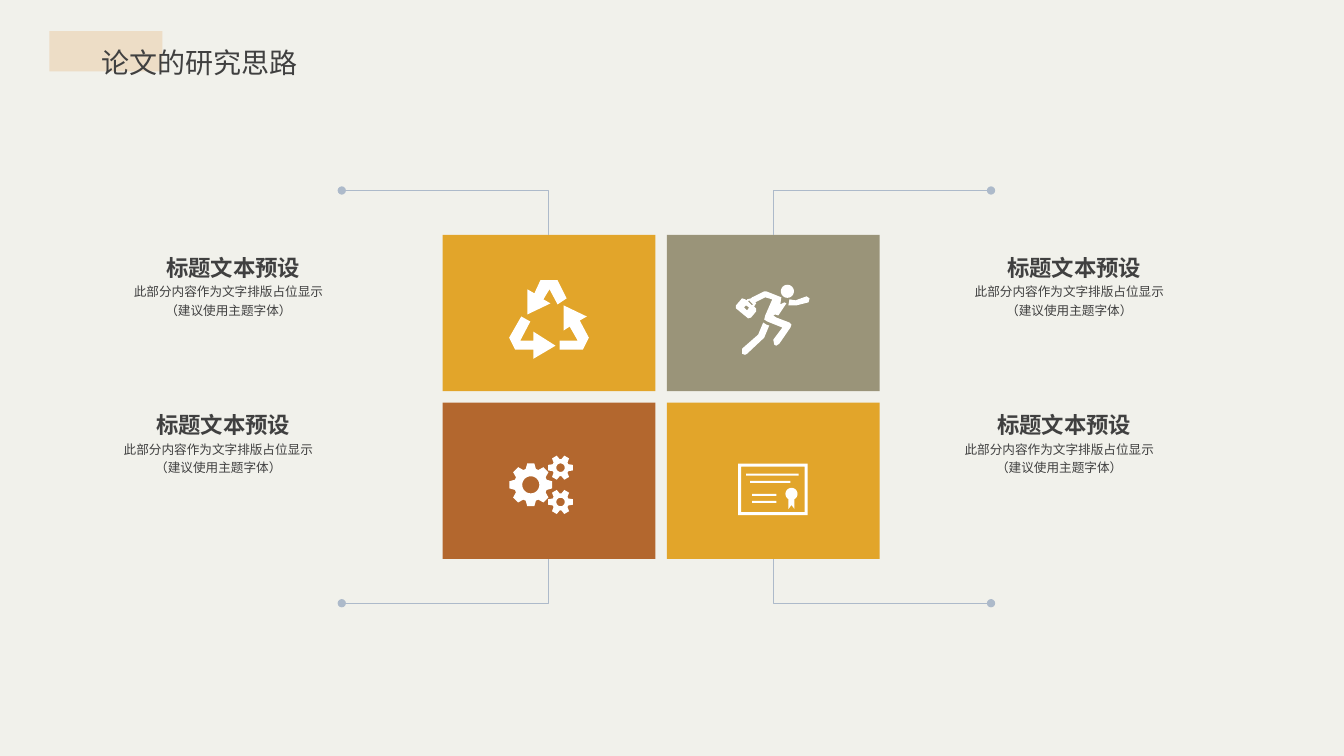
import math
from lxml import etree
from pptx import Presentation
from pptx import util as u
from pptx.dml.color import RGBColor
from pptx.enum import shapes, text
from pptx.oxml.ns import qn

FONT = "Noto Sans CJK SC"
COLORS = dict(bg="F1F1EB", tab="EDDDC6", amber="E2A52A", olive="9A9479",
              rust="B3672E", line="ADBACA", ink="404040", white="FFFFFF")
TITLE = "论文的研究思路"
HEADING = "标题文本预设"
BODY = "此部分内容作为文字排版占位显示\n（建议使用主题字体）"

# Layout in inches: a 2 x 2 grid of cards with captions outside
CARD_X, CARD_Y, CARD_W, CARD_H, GAP = 4.39, 2.33, 2.11, 1.55, 0.115
LEAD = 0.44                      # height of the leader lines
DOT_X = (3.39, 9.83)             # outer ends of the leader lines
CAPTION_X, CAPTION_DX, ROW_SHIFT = 1.23, 8.34, -0.1
CAPTION_Y, CAPTION_DY = 2.33, 1.56


# Icon outlines, in hundredths of an inch from the icon's corner
def arc(cx, cy, r, start=0, end=345):
    return [(cx + r * math.cos(math.radians(a)), cy + r * math.sin(math.radians(a)))
            for a in range(start, end + 1, 15)]


def box(x1, y1, x2, y2):
    return [(x1, y1), (x2, y1), (x2, y2), (x1, y2)]


def gear(cx, cy, teeth, root, tip, hole):
    half = math.pi / teeth
    corners = ((-0.8, root), (-0.42, tip), (0.42, tip), (0.8, root))
    rim = [(cx + r * math.cos(2 * half * i + k * half),
            cy + r * math.sin(2 * half * i + k * half))
           for i in range(teeth) for k, r in corners]
    return [rim, arc(cx, cy, hole)]


RECYCLE = [
    [(48, 0), (31, 0), (25, 13), (18, 9), (18, 34), (41, 23), (34, 19), (40, 9),
     (48, 24), (57, 18)],
    [(24, 60), (11, 60), (21, 41), (12, 36), (0, 57), (6, 69), (24, 69), (24, 78),
     (46, 65), (24, 51)],
    [(70, 40), (77, 36), (54, 25), (54, 50), (60, 46), (68, 60), (50, 60), (50, 69),
     (73, 69), (79, 57)],
]
RUNNER = [
    # front arm
    [(54, 15), (60, 16), (71, 12), (74, 14), (73, 18), (61, 21), (53, 21)],
    # body, bag and front leg
    [(54, 38), (41, 33), (38, 31), (40, 30), (43, 31), (51, 19), (49, 18), (45, 20),
     (46, 13), (41, 11), (31, 7), (29, 7), (17, 13), (16, 14), (12, 15), (12, 16),
     (10, 15), (7, 14), (1, 21), (1, 24), (12, 33), (13, 34), (16, 33), (21, 27),
     (21, 24), (19, 22), (21, 19), (20, 18), (30, 13), (37, 15), (30, 31), (29, 35),
     (32, 37), (47, 43), (38, 55), (39, 60), (41, 61), (44, 59), (55, 43), (56, 40)],
    # bag handle and clasp
    [(18, 20), (17, 21), (13, 17), (14, 16)],
    [(12, 26), (9, 23), (11, 21), (14, 23)],
    # back leg
    [(28, 38), (23, 50), (7, 64), (7, 69), (10, 70), (12, 69), (28, 54), (29, 53),
     (34, 41), (31, 40)],
    arc(52, 7, 6.5),
]
GEARS = (gear(21.5, 29, 8, 16.5, 21.5, 8.5) + gear(51, 12, 6, 8.5, 12.5, 4.2)
         + gear(51, 46, 6, 8.5, 12.5, 4.2))
CERTIFICATE = [
    box(0, 0, 69, 51), box(3, 3, 66, 48),
    box(8, 10, 60, 12), box(12, 17, 52, 19), box(14, 30, 38, 32), box(14, 37, 38, 39),
    arc(53, 30, 6, 120, 420) + [(56, 45), (53, 41), (50, 45)],
]

# column, row, card colour, icon outline, icon corner
CARDS = [
    (0, 0, "amber", RECYCLE, (5.05, 2.78)),
    (1, 0, "olive", RUNNER, (7.29, 2.82)),
    (0, 1, "rust", GEARS, (5.05, 4.52)),
    (1, 1, "amber", CERTIFICATE, (7.32, 4.6)),
]

prs = Presentation()
prs.slide_width, prs.slide_height = u.Inches(13.33), u.Inches(7.5)
slide = prs.slides.add_slide(prs.slide_layouts[6])
slide.background.fill.solid()
slide.background.fill.fore_color.rgb = RGBColor.from_string(COLORS["bg"])


def paint(sp, color):
    sp.shadow.inherit = False
    sp.fill.solid()
    sp.fill.fore_color.rgb = RGBColor.from_string(COLORS[color])
    sp.line.fill.background()


def add_rect(x, y, w, h, color):
    paint(slide.shapes.add_shape(shapes.MSO_SHAPE.RECTANGLE, *map(u.Inches, (x, y, w, h))),
          color)


def add_text(x, y, w, h, words, size, align, spacing=1.0, bold=False, wrap=True,
             anchor=text.MSO_ANCHOR.TOP, inset=0):
    tf = slide.shapes.add_textbox(*map(u.Inches, (x, y, w, h))).text_frame
    tf.word_wrap, tf.vertical_anchor = wrap, anchor
    tf.margin_left = tf.margin_right = u.Inches(inset)
    tf.margin_top = tf.margin_bottom = u.Inches(inset / 2)
    p = tf.paragraphs[0]
    p.text, p.alignment, p.line_spacing = words, align, spacing
    p.font.name, p.font.size, p.font.bold = FONT, u.Pt(size), bold
    p.font.color.rgb = RGBColor.from_string(COLORS["ink"])
    latin = p._p.pPr.find(qn("a:defRPr")).find(qn("a:latin"))
    ea = etree.Element(qn("a:ea"), typeface=FONT)
    latin.addnext(ea)


def add_leader(dot, card):
    sp = slide.shapes.add_connector(shapes.MSO_CONNECTOR.ELBOW,
                                    *map(u.Inches, dot + card))
    sp.line.width = u.Pt(0.75)
    sp.line.color.rgb = RGBColor.from_string(COLORS["line"])
    spPr = sp._element.spPr
    spPr.find(qn("a:prstGeom")).set("prst", "bentConnector2")
    etree.SubElement(spPr.find(qn("a:ln")), qn("a:headEnd"), type="oval")
    etree.SubElement(spPr, qn("a:effectLst"))


def add_icon(outlines, corner):
    placed = [[tuple(u.Inches(c + v / 100) for c, v in zip(corner, pt)) for pt in outline]
              for outline in outlines]
    fb = slide.shapes.build_freeform(*placed[0][0])
    for i, outline in enumerate(placed):
        if i:
            fb.move_to(*outline[0])
        fb.add_line_segments(outline[1:], close=True)
    paint(fb.convert_to_shape(), "white")


# Title
add_rect(0.49, 0.31, 1.12, 0.4, "tab")
add_text(0.91, 0.24, 3.5, 0.55, TITLE, 20, text.PP_ALIGN.JUSTIFY, 1.5, inset=0.1)

# Cards with leader, icon and caption
for col, row, color, icon, corner in CARDS:
    x = CARD_X + col * (CARD_W + GAP)
    y = CARD_Y + row * (CARD_H + GAP)
    add_rect(x, y, CARD_W, CARD_H, color)
    edge = y + row * CARD_H
    add_leader((DOT_X[col], edge + (LEAD if row else -LEAD)), (x + CARD_W / 2, edge))
    add_icon(icon, corner)
    cx = CAPTION_X + col * CAPTION_DX + row * ROW_SHIFT
    cy = CAPTION_Y + row * CAPTION_DY
    add_text(cx, cy, 2.17, 0.46, HEADING, 16, text.PP_ALIGN.CENTER, bold=True,
             wrap=False, anchor=text.MSO_ANCHOR.BOTTOM)
    add_text(cx, cy + 0.46, 2.07, 0.32, BODY, 9, text.PP_ALIGN.CENTER, 1.2)

prs.save("out.pptx")
